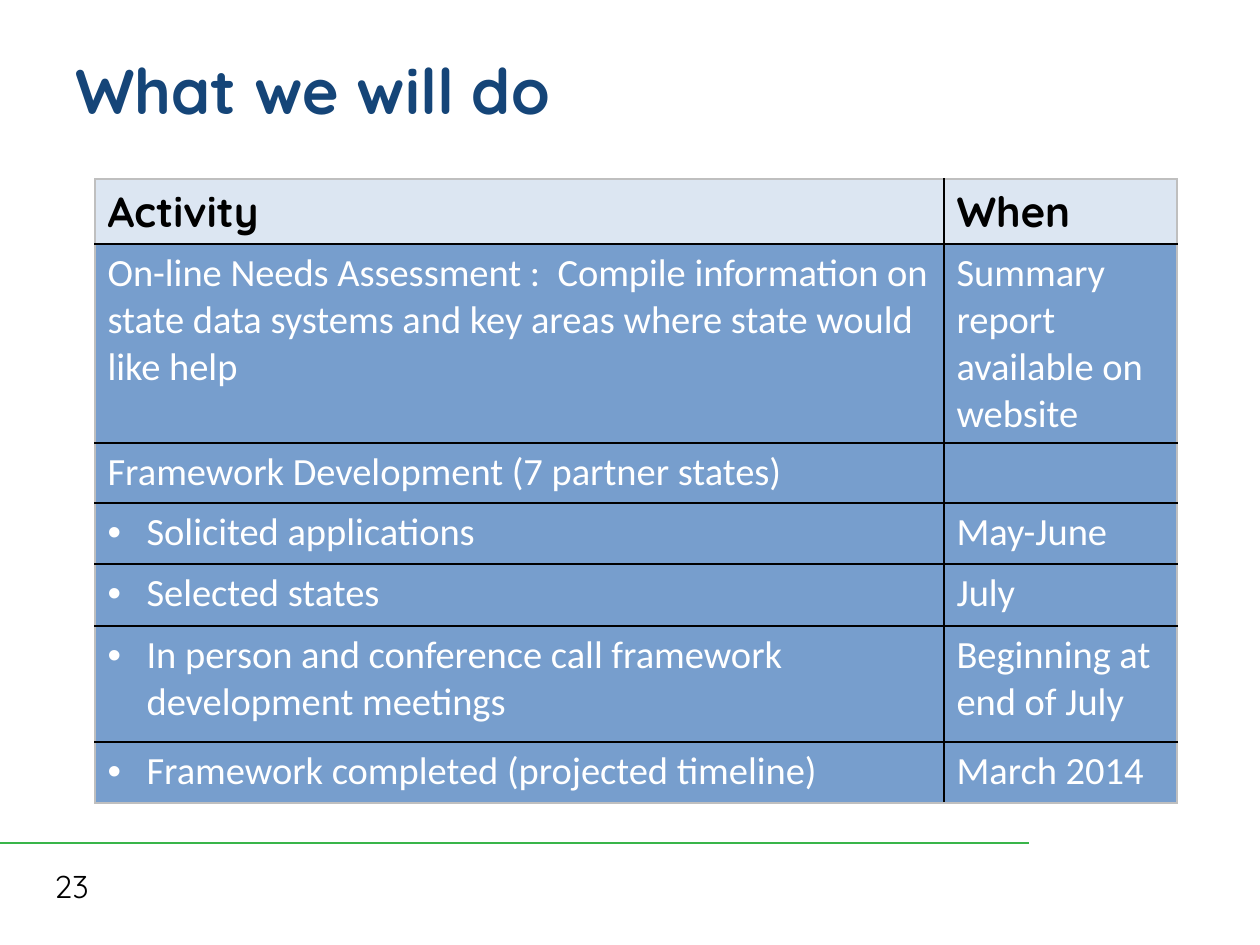
"""Build the "What we will do" slide with its activity timetable."""
import pptx
import pptx.dml.color
import pptx.enum.shapes
import pptx.enum.text
import pptx.oxml.ns
import pptx.util
from lxml import etree

TITLE = "What we will do"
PAGE_NUMBER = "23"
HEADINGS = ("Activity", "When")
ACTIVITIES = [
    ("On-line Needs Assessment :  Compile information on state data systems "
     "and key areas where state would like help",
     "Summary report available on website", False),
    ("Framework Development (7 partner states)", "", False),
    ("Solicited applications", "May-June", True),
    ("Selected states", "July", True),
    ("In person and conference call framework development meetings",
     "Beginning at end of July", True),
    ("Framework completed (projected timeline)", "March 2014", True),
]

THEME = {
    "title": ("Quicksand", 36, "154578", True),
    "heading": ("Quicksand", 24, "000000", True),
    "body": ("Calibri", 22, "FFFFFF", False),
    "number": ("Quicksand", 18, "000000", False),
    "heading_fill": "DCE6F2",
    "body_fill": "779ECD",
    "rule": "39B54A",
    "grid": "000000",
    "frame": "BFBFBF",
}

PAGE_SIZE = (1260, 945)
TITLE_AREA = (63, 10, 1134, 158)
NUMBER_AREA = (42, 861, 294, 50)
RULE_LENGTH, RULE_TOP = 1029, 843
TABLE_LEFT, TABLE_TOP = 95, 179
COLUMN_WIDTHS = (849, 233)
ROW_HEIGHTS = (65, 199, 60, 61, 62, 116, 61)
BULLET_INDENT = 39


def px(length):
    return pptx.util.Emu(round(length * 914400 / 126))


def color(name):
    return pptx.dml.color.RGBColor.from_string(THEME[name])


def add_span(para, text, style):
    span = para.add_run()
    span.text = text
    name, size, rgb, bold = THEME[style]
    span.font.name = name
    span.font.size = pptx.util.Pt(size)
    span.font.bold = bold
    span.font.color.rgb = pptx.dml.color.RGBColor.from_string(rgb)


def add_text(page, area, text, style, anchor):
    box = page.shapes.add_textbox(*map(px, area))
    box.text_frame.word_wrap = True
    box.text_frame.vertical_anchor = anchor
    add_span(box.text_frame.paragraphs[0], text, style)


def add_bullet(para):
    properties = para._p.get_or_add_pPr()
    properties.set("marL", str(px(BULLET_INDENT)))
    properties.set("indent", str(-px(BULLET_INDENT)))
    tag = pptx.oxml.ns.qn
    etree.SubElement(properties, tag("a:buFont"), typeface="Arial")
    etree.SubElement(properties, tag("a:buChar"), char="•")


def add_borders(cell, outer_sides):
    properties = cell._tc.get_or_add_tcPr()
    tag = pptx.oxml.ns.qn
    for side in ("L", "R", "T", "B"):
        border = etree.SubElement(properties, tag("a:ln" + side), w=str(pptx.util.Pt(1)))
        fill = etree.SubElement(border, tag("a:solidFill"))
        shade = THEME["frame" if side in outer_sides else "grid"]
        etree.SubElement(fill, tag("a:srgbClr"), val=shade)


def fill_cell(cell, text, style, bulleted, outer_sides):
    add_borders(cell, outer_sides)
    cell.fill.solid()
    cell.fill.fore_color.rgb = color(style + "_fill")
    para = cell.text_frame.paragraphs[0]
    if bulleted:
        add_bullet(para)
    if text:
        add_span(para, text, style)


def add_timetable(page):
    rows = [(*HEADINGS, False)] + ACTIVITIES
    table = page.shapes.add_table(
        len(rows), len(HEADINGS), px(TABLE_LEFT), px(TABLE_TOP),
        px(sum(COLUMN_WIDTHS)), px(sum(ROW_HEIGHTS))).table
    for column, width in zip(table.columns, COLUMN_WIDTHS):
        column.width = px(width)
    for index, (activity, when, bulleted) in enumerate(rows):
        table.rows[index].height = px(ROW_HEIGHTS[index])
        style = "body" if index else "heading"
        edge = {0: "T", len(rows) - 1: "B"}.get(index, "")
        fill_cell(table.cell(index, 0), activity, style, bulleted, edge + "L")
        fill_cell(table.cell(index, 1), when, style, False, edge + "R")


def add_rule(page):
    rule = page.shapes.add_connector(
        pptx.enum.shapes.MSO_CONNECTOR.STRAIGHT,
        px(0), px(RULE_TOP), px(RULE_LENGTH), px(RULE_TOP))
    rule.line.color.rgb = color("rule")
    rule.line.width = pptx.util.Pt(1.5)
    etree.SubElement(rule._element.spPr, pptx.oxml.ns.qn("a:effectLst"))


def main():
    deck = pptx.Presentation()
    deck.slide_width, deck.slide_height = map(px, PAGE_SIZE)
    page = deck.slides.add_slide(deck.slide_layouts[6])
    anchors = pptx.enum.text.MSO_ANCHOR
    add_rule(page)
    add_text(page, TITLE_AREA, TITLE, "title", anchors.MIDDLE)
    add_text(page, NUMBER_AREA, PAGE_NUMBER, "number", anchors.TOP)
    add_timetable(page)
    deck.save("out.pptx")


if __name__ == "__main__":
    main()
